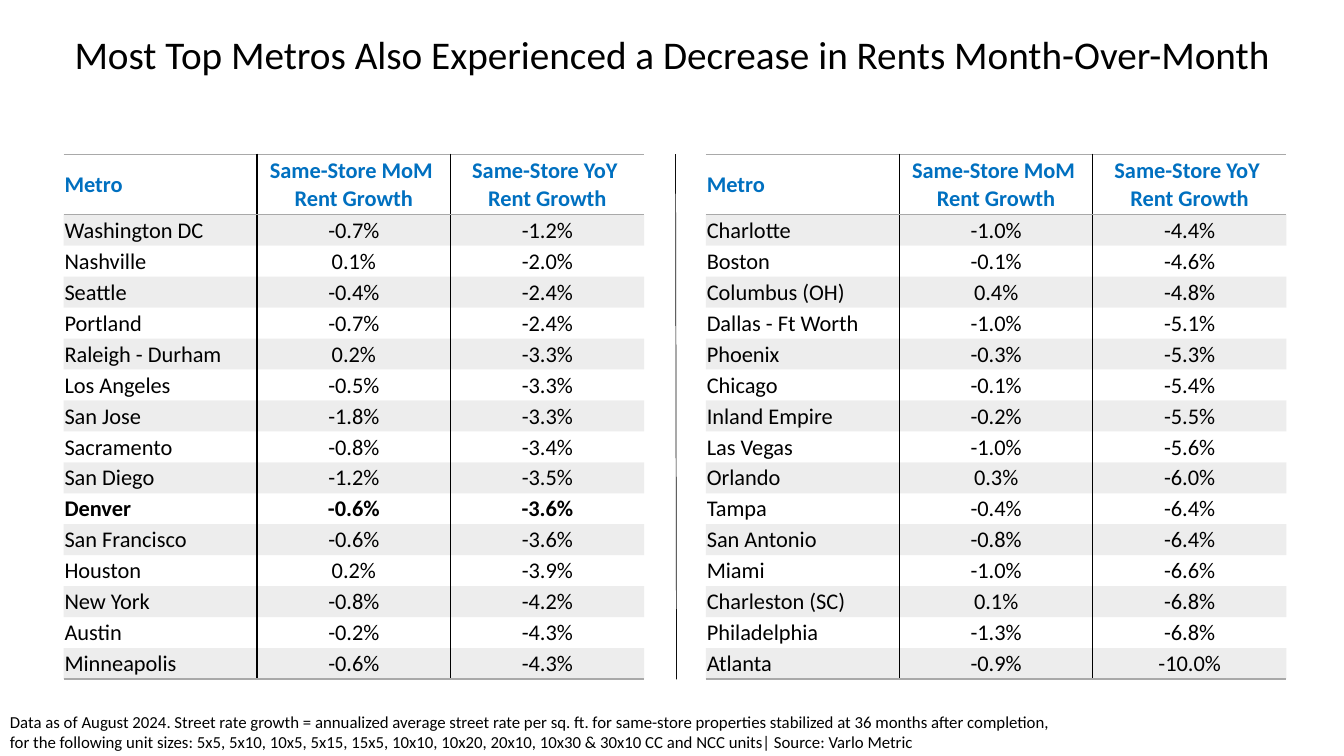
import pptx
import pptx.dml.color
import pptx.enum.shapes
import pptx.enum.text
import pptx.oxml
import pptx.oxml.ns
import pptx.util
from pptx.util import Inches

FONT = "Calibri"
BLACK = "000000"
GRAY = "A9A9A9"
BLUE = "0070C0"
NO_STYLE = "{2D5ABB26-0587-4C30-8999-92F81FD0307C}"
TABLE_TOP = 1.53
TABLE_HEIGHT = 5.21
HEADER_HEIGHT = 0.6
COLUMN_WIDTH = 1.92
HIGHLIGHTED_METRO = "Denver"

TITLE = "Most Top Metros Also Experienced a Decrease in Rents Month-Over-Month"
HEADER = ("Metro", "Same-Store MoM \nRent Growth", "Same-Store YoY \nRent Growth")
LEFT_METROS = [
    ("Washington DC", "-0.7%", "-1.2%"),
    ("Nashville", "0.1%", "-2.0%"),
    ("Seattle", "-0.4%", "-2.4%"),
    ("Portland", "-0.7%", "-2.4%"),
    ("Raleigh - Durham", "0.2%", "-3.3%"),
    ("Los Angeles", "-0.5%", "-3.3%"),
    ("San Jose", "-1.8%", "-3.3%"),
    ("Sacramento", "-0.8%", "-3.4%"),
    ("San Diego", "-1.2%", "-3.5%"),
    ("Denver", "-0.6%", "-3.6%"),
    ("San Francisco", "-0.6%", "-3.6%"),
    ("Houston", "0.2%", "-3.9%"),
    ("New York", "-0.8%", "-4.2%"),
    ("Austin", "-0.2%", "-4.3%"),
    ("Minneapolis", "-0.6%", "-4.3%"),
]
RIGHT_METROS = [
    ("Charlotte", "-1.0%", "-4.4%"),
    ("Boston", "-0.1%", "-4.6%"),
    ("Columbus (OH)", "0.4%", "-4.8%"),
    ("Dallas - Ft Worth", "-1.0%", "-5.1%"),
    ("Phoenix", "-0.3%", "-5.3%"),
    ("Chicago", "-0.1%", "-5.4%"),
    ("Inland Empire", "-0.2%", "-5.5%"),
    ("Las Vegas", "-1.0%", "-5.6%"),
    ("Orlando", "0.3%", "-6.0%"),
    ("Tampa", "-0.4%", "-6.4%"),
    ("San Antonio", "-0.8%", "-6.4%"),
    ("Miami", "-1.0%", "-6.6%"),
    ("Charleston (SC)", "0.1%", "-6.8%"),
    ("Philadelphia", "-1.3%", "-6.8%"),
    ("Atlanta", "-0.9%", "-10.0%"),
]
FOOTNOTE = (
    "Data as of August 2024. Street rate growth = annualized average street rate per sq. ft. "
    "for same-store properties stabilized at 36 months after completion,\n"
    "for the following unit sizes: 5x5, 5x10, 10x5, 5x15, 15x5, 10x10, 10x20, 20x10, "
    "10x30 & 30x10 CC and NCC units| Source: Varlo Metric"
)


def color(hex_value):
    return pptx.dml.color.RGBColor.from_string(hex_value)


def write_text(frame, text, size, hex_value=BLACK, bold=False, centered=False):
    frame.text = text
    align = pptx.enum.text.PP_ALIGN
    for paragraph in frame.paragraphs:
        paragraph.alignment = align.CENTER if centered else align.LEFT
        paragraph.font.name = FONT
        paragraph.font.size = pptx.util.Pt(size)
        paragraph.font.bold = bold
        paragraph.font.color.rgb = color(hex_value)


def add_border(cell, side, hex_value):
    namespace = pptx.oxml.ns.nsdecls("a")
    cell._tc.get_or_add_tcPr().append(pptx.oxml.parse_xml(
        f'<a:ln{side} {namespace} w="12700"><a:solidFill>'
        f'<a:srgbClr val="{hex_value}"/></a:solidFill></a:ln{side}>'
    ))


def shade(cell):
    cell.fill.solid()
    cell.fill.fore_color.rgb = color(GRAY)
    fill_color = cell._tc.tcPr.find(
        pptx.oxml.ns.qn("a:solidFill") + "/" + pptx.oxml.ns.qn("a:srgbClr"))
    alpha = fill_color.makeelement(pptx.oxml.ns.qn("a:alpha"), {"val": "20000"})
    fill_color.append(alpha)


def format_cell(cell, row, column, last_row):
    cell.vertical_anchor = pptx.enum.text.MSO_ANCHOR.MIDDLE
    cell.margin_left = cell.margin_top = cell.margin_right = Inches(0.01)
    cell.margin_bottom = 0
    if column > 0:
        add_border(cell, "L", BLACK)
    if column < len(HEADER) - 1:
        add_border(cell, "R", BLACK)
    if row == 0:
        add_border(cell, "T", GRAY)
    if row in (0, last_row):
        add_border(cell, "B", GRAY)
    if row % 2:
        shade(cell)
    else:
        cell.fill.background()


def add_rent_table(slide, left, metros):
    rows = [HEADER] + metros
    frame = slide.shapes.add_table(
        len(rows), len(HEADER), Inches(left), Inches(TABLE_TOP),
        Inches(COLUMN_WIDTH * len(HEADER)), Inches(TABLE_HEIGHT))
    table = frame.table
    table._tbl.tblPr.find(pptx.oxml.ns.qn("a:tableStyleId")).text = NO_STYLE
    table.horz_banding = False
    for column in table.columns:
        column.width = Inches(COLUMN_WIDTH)
    for row_index, values in enumerate(rows):
        is_header = row_index == 0
        metro_height = (TABLE_HEIGHT - HEADER_HEIGHT) / len(metros)
        table.rows[row_index].height = Inches(HEADER_HEIGHT if is_header else metro_height)
        for column_index, value in enumerate(values):
            cell = table.cell(row_index, column_index)
            write_text(cell.text_frame, value, 16, BLUE if is_header else BLACK,
                       is_header or values[0] == HIGHLIGHTED_METRO, column_index > 0)
            format_cell(cell, row_index, column_index, len(metros))


def add_divider(slide):
    divider = slide.shapes.add_connector(
        pptx.enum.shapes.MSO_CONNECTOR.STRAIGHT, Inches(6.7), Inches(TABLE_TOP),
        Inches(6.71), Inches(TABLE_TOP + TABLE_HEIGHT))
    divider.line.color.rgb = color("0D0D0D")
    divider.line.width = pptx.util.Pt(0.5)
    properties = divider._element.spPr
    properties.append(properties.makeelement(pptx.oxml.ns.qn("a:effectLst"), {}))


def set_title(slide):
    title = slide.shapes.title
    title.left, title.top = 0, Inches(0.25)
    title.width, title.height = Inches(13.33), Inches(0.48)
    write_text(title.text_frame, TITLE, 28, centered=True)
    title.text_frame.vertical_anchor = pptx.enum.text.MSO_ANCHOR.TOP
    title.text_frame.auto_size = pptx.enum.text.MSO_AUTO_SIZE.NONE


def add_footnote(slide):
    box = slide.shapes.add_textbox(0, Inches(7.01), Inches(11.42), Inches(0.48))
    box.text_frame.word_wrap = False
    write_text(box.text_frame, FOOTNOTE, 12)


def main():
    presentation = pptx.Presentation()
    presentation.slide_width = Inches(13.33)
    presentation.slide_height = Inches(7.5)
    slide = presentation.slides.add_slide(presentation.slide_layouts[5])
    set_title(slide)
    add_rent_table(slide, 0.63, LEFT_METROS)
    add_rent_table(slide, 7, RIGHT_METROS)
    add_divider(slide)
    add_footnote(slide)
    presentation.save("out.pptx")


if __name__ == "__main__":
    main()
